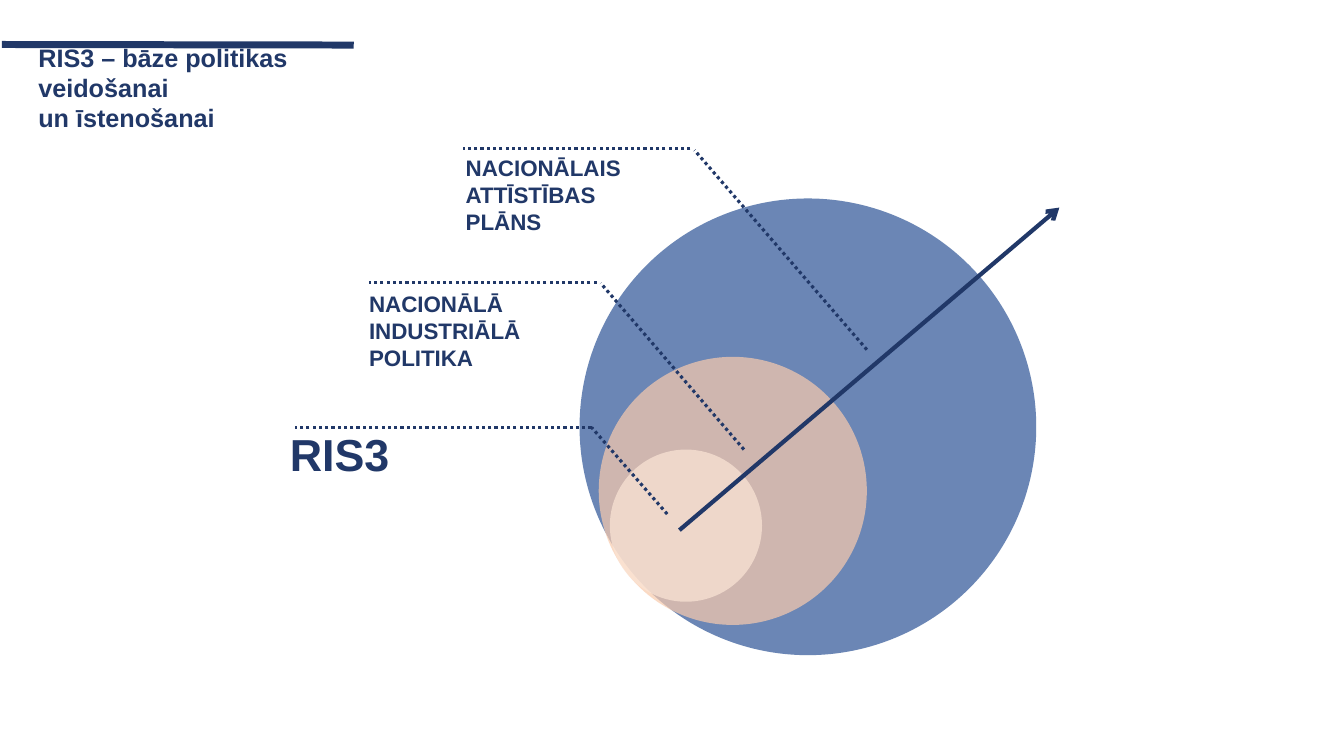
from pptx import Presentation
from pptx.dml.color import RGBColor
from pptx.enum.dml import MSO_LINE
from pptx.enum.shapes import MSO_CONNECTOR, MSO_SHAPE
from pptx.enum.text import MSO_ANCHOR, PP_ALIGN
from pptx.oxml.ns import qn
from pptx.util import Pt
from lxml import etree

OVAL = MSO_SHAPE.OVAL
STRAIGHT = MSO_CONNECTOR.STRAIGHT
DOTTED = MSO_LINE.ROUND_DOT
MIDDLE = MSO_ANCHOR.MIDDLE
LEFT, CENTER = PP_ALIGN.LEFT, PP_ALIGN.CENTER
NAVY = "213868"

CIRCLES = [
    (252, 36, 326.2, "2F5597"),
    (265.7, 149.1, 191.5, "F8CBAD"),
    (273.6, 215.3, 108.7, "FBE5D6"),
]
CALLOUTS = [
    {"words": ["NACIONĀLAIS", "ATTĪSTĪBAS", "PLĀNS"], "label": (168.5, 2.2, 191.5, 61.9),
     "rule": (168.5, 331.2, 0), "pointer": (334.1, 1.5, 457.2, 144),
     "style": {"size": 16}},
    {"words": ["NACIONĀLĀ", "INDUSTRIĀLĀ", "POLITIKA"], "label": (99.4, 99.4, 191.5, 61.9),
     "rule": (101.5, 264.2, 95.8), "pointer": (267.1, 96.5, 369.4, 215.3),
     "style": {"size": 16}},
    {"words": ["RIS3"], "label": (0, 196.6, 161.3, 42.5),
     "rule": (49, 260.6, 199.5), "pointer": (260.6, 199.5, 314.6, 261.4),
     "style": {"size": 32, "align": CENTER}},
]
GROWTH_ARROW = (323.3, 272.9, 594.7, 42.5)


def colour(hex_value):
    return RGBColor.from_string(hex_value)


def add_text(slide, paragraphs, box, size, align=LEFT):
    area = slide.shapes.add_textbox(*map(Pt, box))
    frame = area.text_frame
    frame.word_wrap = True
    frame.vertical_anchor = MIDDLE
    frame.margin_left = frame.margin_right = Pt(2.2)
    frame.margin_top = frame.margin_bottom = Pt(2.2)
    frame.text = "\n".join(paragraphs)
    for paragraph in frame.paragraphs:
        paragraph.alignment = align
        font = paragraph.font
        font.name, font.size, font.bold = "Arial", Pt(size), True
        font.color.rgb = colour(NAVY)


def add_line(slide, ends, width, dash=None, arrow=False):
    connector = slide.shapes.add_connector(STRAIGHT, *map(Pt, ends))
    connector.line.color.rgb = colour(NAVY)
    connector.line.width = Pt(width)
    if dash is not None:
        connector.line.dash_style = dash
    if arrow:
        etree.SubElement(connector.line._get_or_add_ln(), qn("a:tailEnd"), type="arrow")
    etree.SubElement(connector._element.spPr, qn("a:effectLst"))


def add_circle(slide, left, top, diameter, fill):
    circle = slide.shapes.add_shape(OVAL, Pt(left), Pt(top), Pt(diameter), Pt(diameter))
    circle.shadow.inherit = False
    circle.line.fill.background()
    circle.fill.solid()
    circle.fill.fore_color.rgb = colour(fill)
    tint = circle._element.spPr.find(qn("a:solidFill"))[0]
    etree.SubElement(tint, qn("a:alpha"), val="71000")


def add_heading(slide, left, top, width):
    add_line(slide, (left, top, left + width, top + 0.4), 5)
    add_text(slide, ["RIS3 – bāze politikas veidošanai", "un īstenošanai"],
             (left + 23.8, top + 7.1, width + 1.4, 47.5), 18)


def add_nested_policies(slide, left, top):
    def ends(x1, y1, x2, y2):
        return left + x1, top + y1, left + x2, top + y2

    for x, y, diameter, fill in CIRCLES:
        add_circle(slide, left + x, top + y, diameter, fill)
    for callout in CALLOUTS:
        x, y, width, height = callout["label"]
        add_text(slide, callout["words"], (left + x, top + y, width, height),
                 **callout["style"])
        start, elbow, level = callout["rule"]
        add_line(slide, ends(elbow, level, start, level), 2.25, DOTTED)
        x1, y1, x2, y2 = callout["pointer"]
        add_line(slide, ends(x2, y2, x1, y1), 2.25, DOTTED)
    add_line(slide, ends(*GROWTH_ARROW), 3, arrow=True)


def main():
    deck = Presentation()
    deck.slide_width, deck.slide_height = Pt(960), Pt(540)
    slide = deck.slides.add_slide(deck.slide_layouts[6])
    add_nested_policies(slide, 162, 105.8)
    add_heading(slide, 1.4, 31.8, 251.3)
    deck.save("out.pptx")


if __name__ == "__main__":
    main()
